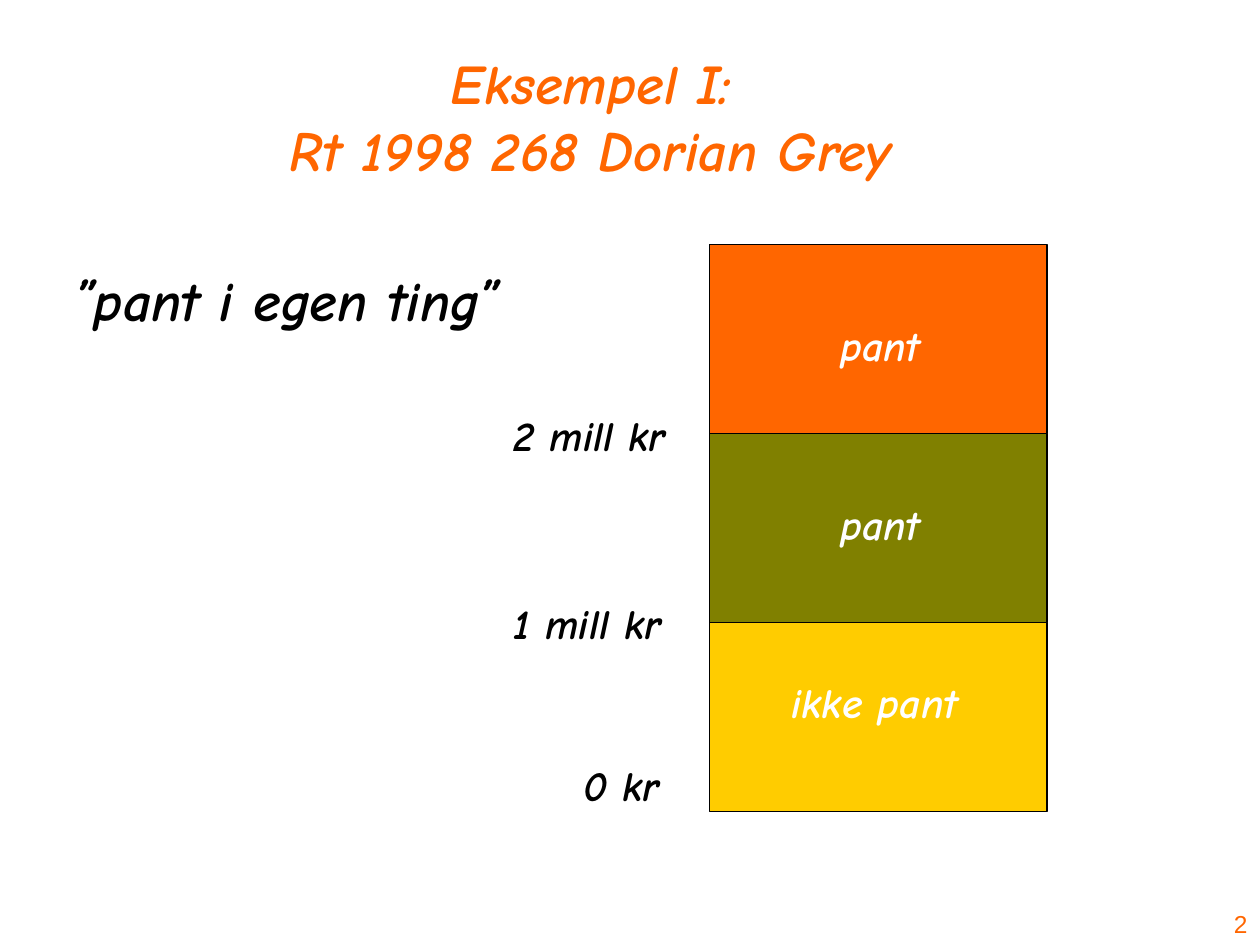
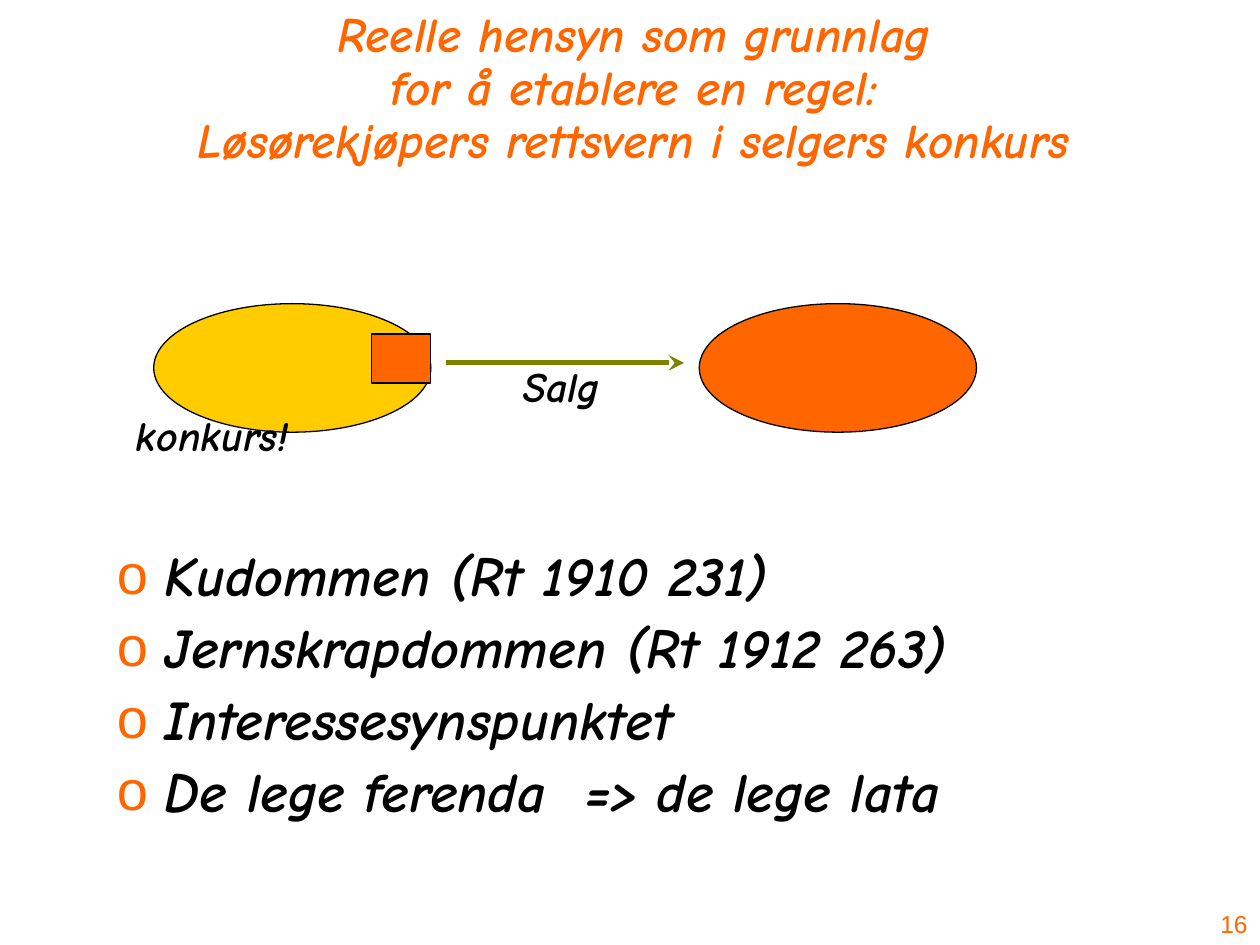
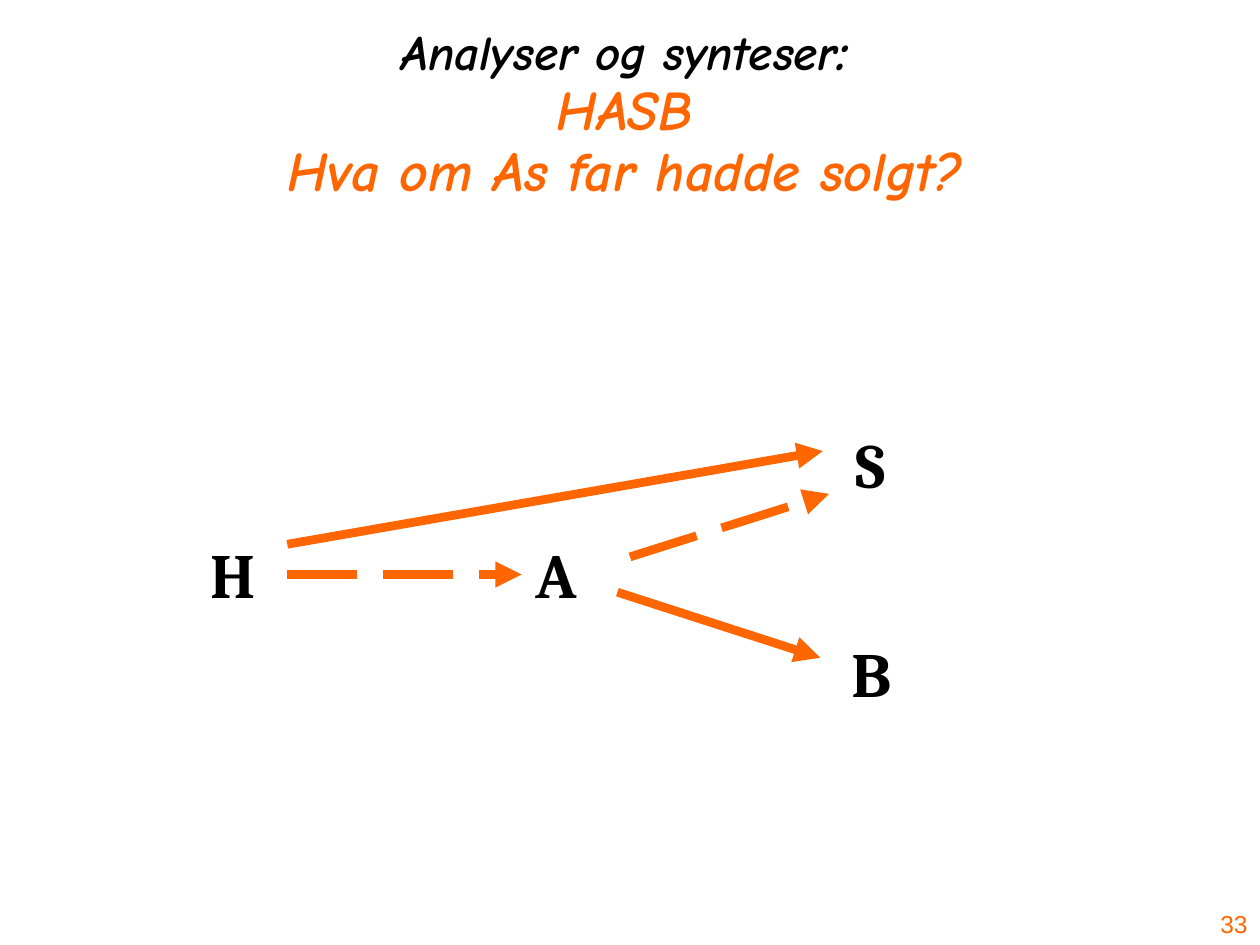
"""Build three slides on security interests, sale and bankruptcy."""
from lxml import etree
from pptx import Presentation, util as u
from pptx.dml.color import RGBColor
from pptx.enum import dml, shapes, text
from pptx.oxml.ns import qn

COLORS = {"orange": "FF6600", "olive": "808000", "yellow": "FFCC00", "black": "000000", "white": "FFFFFF"}
RGB = {name: RGBColor.from_string(value) for name, value in COLORS.items()}
HAND, SERIF, SANS = "Comic Neue", "Cambria", "Arial"

presentation = Presentation()
presentation.slide_width, presentation.slide_height = u.Inches(10), u.Inches(7.5)
CELL = presentation.slide_width // 10


def set_font(font, size, color="black", name=HAND):
    """Format a font; the hand style is bold italic, the serif bold."""
    font.name, font.size, font.color.rgb = name, u.Pt(size), RGB[color]
    font.bold, font.italic = name != SANS, name == HAND


def add_text(slide, lines, box, size=24, color="black", name=HAND, wrap=False):
    """Add a text box given in grid cells and return its text frame."""
    frame = slide.shapes.add_textbox(*[int(CELL * value) for value in box]).text_frame
    frame.text = lines
    frame.word_wrap = wrap
    for paragraph in frame.paragraphs:
        set_font(paragraph.font, size, color, name)
    return frame


titles = [
    ("2", (0.44, 0.25, 8.5, 1.25), text.MSO_ANCHOR.BOTTOM, 1, True,
     [("Eksempel I:", 32, "orange"), ("\n", 32, "orange"), ("Rt 1998 268 Dorian Grey", 32, "orange")]),
    ("16", (0.46, 0.03, 9.14, 1.36), text.MSO_ANCHOR.MIDDLE, 0.9, True,
     [("Reelle hensyn som grunnlag", 28, "orange"), ("\n", 28, "orange"),
      ("for å etablere en regel:", 28, "orange"), ("\n", 28, "orange"),
      ("Løsørekjøpers rettsvern i selgers konkurs", 28, "orange")]),
    ("33", (1.8, 0.13, 6.32, 1.53), text.MSO_ANCHOR.MIDDLE, 0.9, False,
     [("Analyser og synteser", 28, "black"), (":", 32, "black"), ("\n", 32, "black"),
      ("HASB", 32, "orange"), ("\n", 32, "orange"), ("Hva om As far hadde solgt?", 32, "orange")]),
]
slides = []
for number, box, anchor, spacing, wrap, runs in titles:
    slide = presentation.slides.add_slide(presentation.slide_layouts[5])
    slides.append(slide)
    title = slide.shapes.title
    title.left, title.top, title.width, title.height = [int(CELL * value) for value in box]
    frame = title.text_frame
    frame.auto_size = text.MSO_AUTO_SIZE.NONE
    frame.vertical_anchor, frame.word_wrap = anchor, wrap
    paragraph = frame.paragraphs[0]
    paragraph.alignment, paragraph.line_spacing = text.PP_ALIGN.CENTER, spacing
    for content, size, color in runs:
        if content == "\n":
            paragraph.add_line_break()
        else:
            run = paragraph.add_run()
            run.text = content
            set_font(run.font, size, color)
    footer = add_text(slide, number, (9.33, 7, 0.67, 0.5), 14, "orange", SANS, True)
    footer.vertical_anchor = text.MSO_ANCHOR.BOTTOM
    footer.paragraphs[0].alignment = text.PP_ALIGN.RIGHT

pledge, sale, chain = slides
RECTANGLE, OVAL = shapes.MSO_SHAPE.RECTANGLE, shapes.MSO_SHAPE.OVAL
figures = [(pledge, RECTANGLE, (5.63, 1.94 + 1.5 * row, 2.68, 1.5), color)
           for row, color in enumerate(("orange", "olive", "yellow"))]
figures += [
    (sale, OVAL, (5.55, 2.41, 2.2, 1.02), "orange"),
    (sale, OVAL, (1.22, 2.41, 2.2, 1.02), "yellow"),
    (sale, RECTANGLE, (2.95, 2.65, 0.47, 0.39), "orange"),
]
for slide, kind, box, color in figures:
    shape = slide.shapes.add_shape(kind, *[int(CELL * value) for value in box])
    shape.shadow.inherit = False
    shape.fill.solid()
    shape.fill.fore_color.rgb = RGB[color]
    shape.line.color.rgb, shape.line.width = RGB["black"], u.Pt(0.75)

arrows = [
    (sale, (3.54, 2.88, 5.43, 2.88), "olive", 3, False, "stealth"),
    (chain, (4.9, 4.7, 6.51, 5.22), "orange", 5, False, "triangle"),
    (chain, (2.28, 4.56, 4.14, 4.56), "orange", 5, True, "triangle"),
    (chain, (2.28, 4.32, 6.53, 3.58), "orange", 5, False, "triangle"),
    (chain, (5, 4.42, 6.58, 3.92), "orange", 5, True, "triangle"),
]
for slide, ends, color, width, dashed, head in arrows:
    arrow = slide.shapes.add_connector(shapes.MSO_CONNECTOR.STRAIGHT, *[int(CELL * value) for value in ends])
    arrow.line.color.rgb, arrow.line.width = RGB[color], u.Pt(width)
    if dashed:
        arrow.line.dash_style = dml.MSO_LINE.LONG_DASH
    properties = arrow._element.spPr
    etree.SubElement(properties.find(qn("a:ln")), qn("a:tailEnd"), type=head)
    etree.SubElement(properties, qn("a:effectLst"))

labels = [
    (pledge, "0 kr", (4.53, 5.98, 0.89), "black"),
    (pledge, "1 mill kr", (3.98, 4.69, 1.57), "black"),
    (pledge, "2 mill kr", (3.98, 3.2, 1.57), "black"),
    (pledge, "pant", (6.57, 2.49, 0.9), "white"),
    (pledge, "pant", (6.57, 3.91, 0.9), "white"),
    (pledge, "ikke pant", (6.18, 5.32, 1.68), "white"),
    (sale, "Salg", (4.06, 2.81, 0.89), "black"),
    (sale, "konkurs!", (0.98, 3.2, 1.57), "black"),
]
for slide, label, box, color in labels:
    add_text(slide, label, (*box, 0.5), color=color)

parties = {"H": (1.57, 4.2, 0.59), "A": (4.15, 4.2, 0.56), "S": (6.69, 3.33, 0.48), "B": (6.66, 4.99, 0.53)}
for party, box in parties.items():
    add_text(chain, party, (*box, 0.7), 36, name=SERIF)

add_text(pledge, "”pant i egen ting”", (0.5, 2.06, 8.94, 4.6), 32, wrap=True)

cases = add_text(sale, "Kudommen (Rt 1910 231)\nJernskrapdommen (Rt 1912 263)\n"
                 "Interessesynspunktet\nDe lege ferenda  => de lege lata", (0.83, 4.3, 8.03, 2.29), 32, wrap=True)
for index, paragraph in enumerate(cases.paragraphs):
    paragraph.line_spacing = 0.9
    if index:
        paragraph.space_before = u.Pt(6.5)
    properties = paragraph._p.get_or_add_pPr()
    properties.set("marL", str(u.Inches(0.38)))
    properties.set("indent", str(-u.Inches(0.38)))
    defaults = properties.find(qn("a:defRPr"))
    bullet_color = etree.Element(qn("a:buClr"))
    etree.SubElement(bullet_color, qn("a:srgbClr"), val=COLORS["orange"])
    defaults.addprevious(bullet_color)
    defaults.addprevious(etree.Element(qn("a:buFont"), typeface=SANS))
    defaults.addprevious(etree.Element(qn("a:buChar"), char="o"))

presentation.save("out.pptx")
